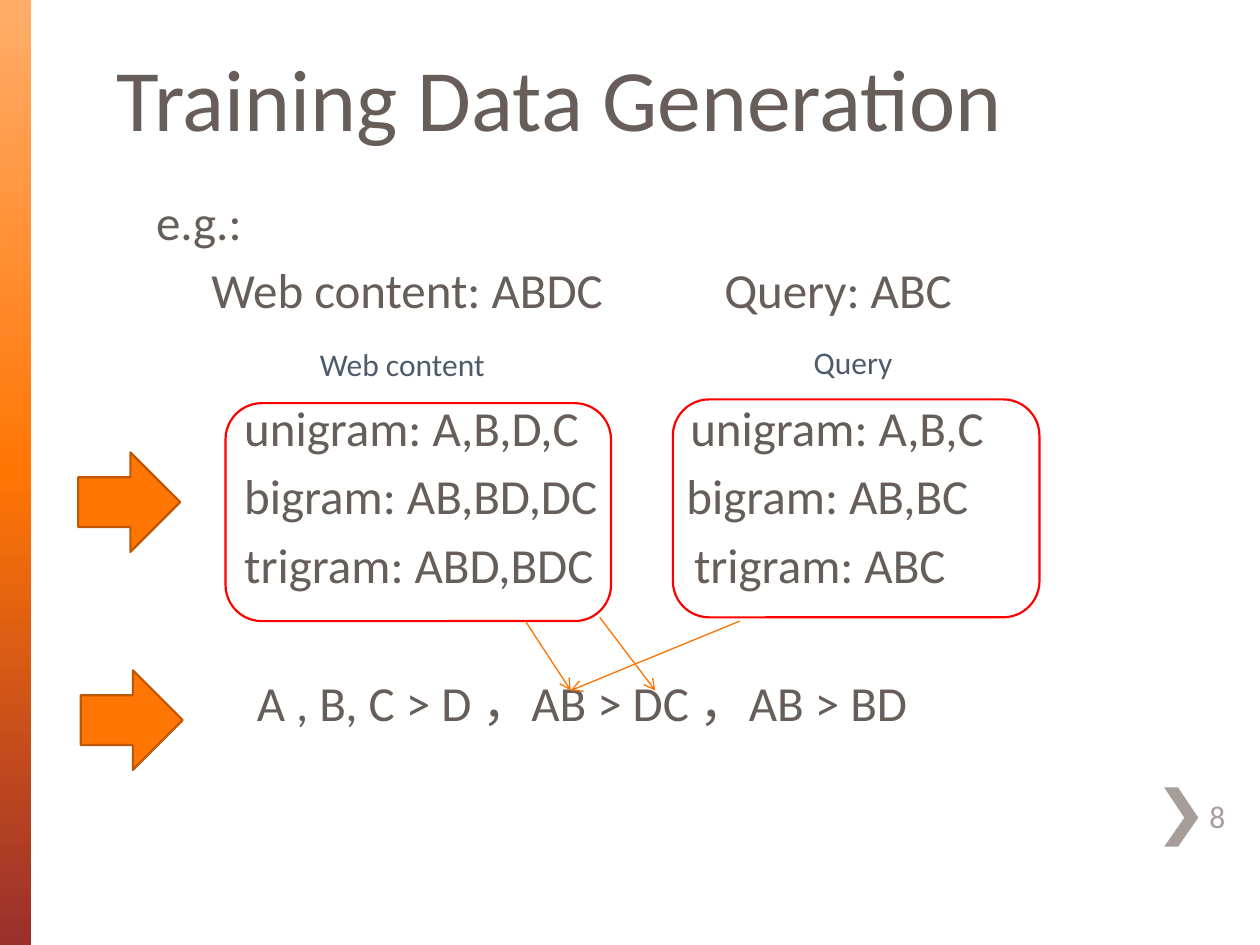
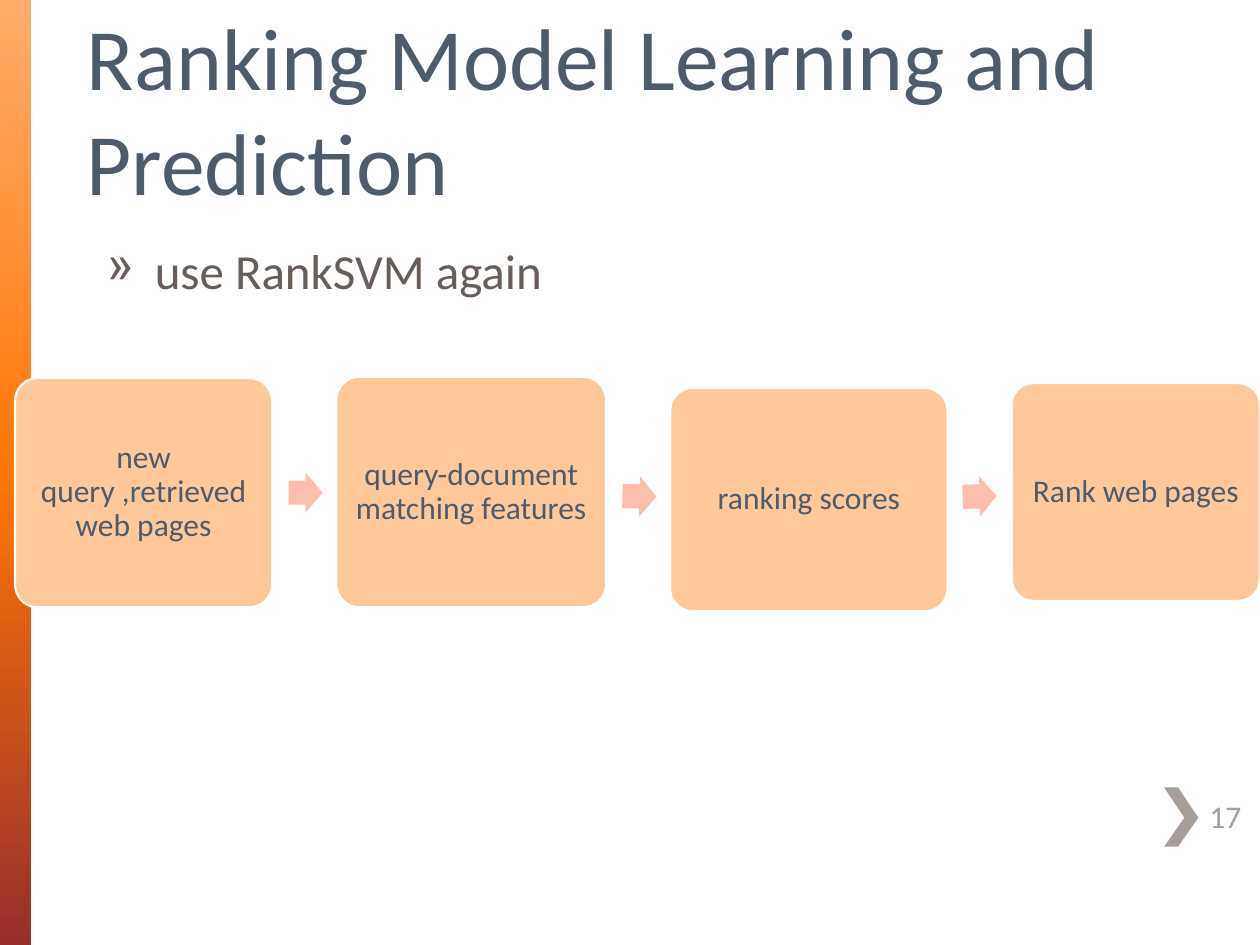
import copy
import dataclasses
import typing

import lxml.etree
import pptx
import pptx.dml.color
import pptx.dml.fill
import pptx.enum.shapes
import pptx.enum.text
import pptx.oxml.ns
import pptx.presentation
import pptx.shapes.autoshape
import pptx.slide
import pptx.text.text
import pptx.util

Inches = pptx.util.Inches
Pt = pptx.util.Pt
Preset = pptx.enum.shapes.MSO_SHAPE
Anchor = pptx.enum.text.MSO_ANCHOR
Align = pptx.enum.text.PP_ALIGN

FONT = "Calibri"
BROWN, SLATE, GREY = "675D59", "4D5B6B", "A79D99"
ORANGE, DARK_ORANGE, LINK_ORANGE = "FF7605", "BD5704", "FE7300"
PEACH, PINK, RED, WHITE = "FFC89B", "FFBDAB", "FF0000", "FFFFFF"
BAND_STOPS = [(0, "FFAD69"), (0.5, ORANGE), (1, "9A2F2C")]
CHEVRON = [(9.35, 6.25), (9.24, 6.25), (9.4, 6.49), (9.24, 6.72), (9.35, 6.72), (9.51, 6.49)]
ROW_GAP, SECTION_GAP = 5.3, 45.4


@dataclasses.dataclass
class Box:
    """A rectangle in inches."""

    left: float
    top: float
    width: float
    height: float

    def lengths(self) -> list[pptx.util.Length]:
        """Return the four sides as lengths."""
        return [Inches(side) for side in dataclasses.astuple(self)]


@dataclasses.dataclass
class TextStyle:
    """Size and colour of a run."""

    size: float
    color: str


@dataclasses.dataclass
class ExampleRow:
    """A line of the worked example with its columns and tab stops."""

    columns: list[str]
    stops: list[float]
    space_before: float = ROW_GAP


@dataclasses.dataclass
class Step:
    """A box of the prediction process."""

    text: str
    box: Box


@dataclasses.dataclass
class StepArrow:
    """An arrow between two process boxes."""

    left: float
    top: float
    rotation: float = 0


@dataclasses.dataclass
class Link:
    """An arrow from n-grams to a preference pair."""

    start: tuple[float, float]
    end: tuple[float, float]


BODY = TextStyle(28, BROWN)
LABEL = TextStyle(18, SLATE)
NUMBER = TextStyle(18, GREY)

EXAMPLE_ROWS = [
    ExampleRow(["e.g.:"], [], 0),
    ExampleRow(["Web content: ABDC", "Query: ABC"], [0.44, 4.51]),
    ExampleRow(["unigram: A,B,D,C", "unigram: A,B,C"], [0.7, 4.24], SECTION_GAP),
    ExampleRow(["bigram: AB,BD,DC", "bigram: AB,BC"], [0.7, 4.21]),
    ExampleRow(["trigram: ABD,BDC", "trigram: ABC"], [0.7, 4.27]),
    ExampleRow(["A , B, C > D ，AB > DC ，AB > BD"], [0.8], SECTION_GAP),
]
NGRAM_FRAMES = [Box(5.34, 3.17, 2.91, 1.73), Box(1.79, 3.2, 3.06, 1.73)]
NGRAM_LABELS = [("Web content", Box(2.44, 2.69, 1.73, 0.4)), ("Query", Box(6.36, 2.67, 0.87, 0.4))]
STAGE_ARROWS = [Box(0.62, 3.59, 0.81, 0.79), Box(0.64, 5.32, 0.81, 0.79)]
LINKS = [
    Link((4.17, 4.93), (4.53, 5.48)),
    Link((5.87, 4.93), (4.53, 5.48)),
    Link((4.76, 4.9), (5.2, 5.48)),
]
STEPS = [
    Step("new query ,retrieved web pages", Box(0.12, 3, 2.04, 1.82)),
    Step("query-document matching features", Box(2.67, 2.99, 2.14, 1.83)),
    Step("ranking scores", Box(5.32, 3.08, 2.2, 1.77)),
    Step("Rank web pages", Box(8.03, 3.04, 1.97, 1.73)),
]
STEP_ARROWS = [StepArrow(2.29, 3.75), StepArrow(4.94, 3.78, 1.3), StepArrow(7.64, 3.78, 358.7)]


def rgb(value: str) -> pptx.dml.color.RGBColor:
    """Turn a hex string into a colour."""
    return pptx.dml.color.RGBColor.from_string(value)


def paint(
    shape: pptx.shapes.autoshape.Shape,
    fill: typing.Optional[str] = None,
    line: typing.Optional[str] = None,
) -> None:
    """Set the fill and outline of a shape and drop its shadow."""
    shape.shadow.inherit = False
    if fill:
        shape.fill.solid()
        shape.fill.fore_color.rgb = rgb(fill)
    else:
        shape.fill.background()
    if line:
        shape.line.color.rgb = rgb(line)
        shape.line.width = Pt(1.25)
    else:
        shape.line.fill.background()


def add_preset(
    slide: pptx.slide.Slide,
    preset: Preset,
    box: Box,
    fill: typing.Optional[str] = None,
    line: typing.Optional[str] = None,
) -> pptx.shapes.autoshape.Shape:
    """Add a painted preset shape."""
    shape = slide.shapes.add_shape(preset, *box.lengths())
    paint(shape, fill, line)
    return shape


def add_run(paragraph: pptx.text.text._Paragraph, text: str, style: TextStyle) -> None:
    """Append a styled run to a paragraph."""
    run = paragraph.add_run()
    run.text = text
    run.font.name = FONT
    run.font.size = Pt(style.size)
    run.font.color.rgb = rgb(style.color)


def add_frame(
    slide: pptx.slide.Slide, box: Box, anchor: Anchor = Anchor.TOP
) -> pptx.text.text.TextFrame:
    """Add an empty wrapping text box."""
    frame = slide.shapes.add_textbox(*box.lengths()).text_frame
    frame.word_wrap = True
    frame.vertical_anchor = anchor
    return frame


def add_text(
    slide: pptx.slide.Slide, box: Box, text: str, style: TextStyle, anchor: Anchor = Anchor.TOP
) -> pptx.text.text._Paragraph:
    """Add a text box with one paragraph."""
    paragraph = add_frame(slide, box, anchor).paragraphs[0]
    add_run(paragraph, text, style)
    return paragraph


def set_gradient(fill: pptx.dml.fill.FillFormat, stops: list[tuple[float, str]]) -> None:
    """Fill downwards with three gradient stops."""
    fill.gradient()
    fill.gradient_angle = 270
    stop_list = fill.gradient_stops[0]._gs.getparent()
    stop_list.append(copy.deepcopy(stop_list[0]))
    for stop, (position, color) in zip(fill.gradient_stops, stops):
        stop.position = position
        stop.color.rgb = rgb(color)


def add_chevron(slide: pptx.slide.Slide) -> None:
    """Draw the chevron beside the page number."""
    start, *others = [(Inches(x), Inches(y)) for x, y in CHEVRON]
    builder = slide.shapes.build_freeform(*start)
    builder.add_line_segments(others, close=True)
    paint(builder.convert_to_shape(), GREY)


def add_base_slide(
    presentation: pptx.presentation.Presentation,
    title: str,
    title_box: Box,
    title_color: str,
    number: int,
) -> pptx.slide.Slide:
    """Add a slide with the side band, title, chevron and page number."""
    slide = presentation.slides.add_slide(presentation.slide_layouts[6])
    band = add_preset(slide, Preset.RECTANGLE, Box(0, 0, 0.25, 7.5))
    set_gradient(band.fill, BAND_STOPS)
    add_chevron(slide)
    add_text(slide, title_box, title, TextStyle(50, title_color), Anchor.BOTTOM)
    add_text(slide, Box(9.5, 6.28, 0.5, 0.39), str(number), NUMBER, Anchor.MIDDLE)
    return slide


def add_example(slide: pptx.slide.Slide, rows: list[ExampleRow]) -> None:
    """Write the worked example with columns on tab stops."""
    frame = add_frame(slide, Box(1.14, 1.47, 8.17, 4.83))
    for index, row in enumerate(rows):
        paragraph = frame.add_paragraph() if index else frame.paragraphs[0]
        paragraph.space_before = Pt(row.space_before)
        properties = paragraph._p.get_or_add_pPr()
        if row.stops:
            tabs = lxml.etree.SubElement(properties, pptx.oxml.ns.qn("a:tabLst"))
            for stop in row.stops:
                tab = lxml.etree.SubElement(tabs, pptx.oxml.ns.qn("a:tab"))
                tab.set("pos", str(Inches(stop)))
                tab.set("algn", "l")
        lead = "\t" if row.stops else ""
        for column in row.columns:
            add_run(paragraph, lead + column, BODY)


def add_link(slide: pptx.slide.Slide, link: Link) -> None:
    """Draw a thin arrow."""
    points = [Inches(value) for value in (*link.start, *link.end)]
    connector = slide.shapes.add_connector(pptx.enum.shapes.MSO_CONNECTOR.STRAIGHT, *points)
    connector.line.color.rgb = rgb(LINK_ORANGE)
    connector.line.width = Pt(0.75)
    head = lxml.etree.SubElement(connector.line._get_or_add_ln(), pptx.oxml.ns.qn("a:tailEnd"))
    head.set("type", "arrow")
    lxml.etree.SubElement(connector._element.spPr, pptx.oxml.ns.qn("a:effectLst"))


def add_step(slide: pptx.slide.Slide, step: Step) -> None:
    """Draw a process box with centred text."""
    shape = add_preset(slide, Preset.ROUNDED_RECTANGLE, step.box, PEACH, WHITE)
    shape.adjustments[0] = 0.1
    frame = shape.text_frame
    frame.word_wrap = True
    frame.vertical_anchor = Anchor.MIDDLE
    frame.margin_left = frame.margin_right = Inches(0.07)
    frame.margin_top = frame.margin_bottom = Inches(0.07)
    paragraph = frame.paragraphs[0]
    paragraph.alignment = Align.CENTER
    paragraph.line_spacing = 0.9
    add_run(paragraph, step.text, LABEL)


def build_training_slide(presentation: pptx.presentation.Presentation) -> None:
    """Build the training data slide."""
    title_box = Box(0.83, 0.29, 7.92, 0.94)
    slide = add_base_slide(presentation, "Training Data Generation", title_box, BROWN, 8)
    add_example(slide, EXAMPLE_ROWS)
    for box in NGRAM_FRAMES:
        add_preset(slide, Preset.ROUNDED_RECTANGLE, box, line=RED)
    for text, box in NGRAM_LABELS:
        add_text(slide, box, text, LABEL)
    for box in STAGE_ARROWS:
        add_preset(slide, Preset.RIGHT_ARROW, box, ORANGE, DARK_ORANGE)
    for link in LINKS:
        add_link(slide, link)


def build_prediction_slide(presentation: pptx.presentation.Presentation) -> None:
    """Build the ranking model slide."""
    title_box = Box(0.59, 0.13, 8.99, 1.61)
    title = "Ranking Model Learning and Prediction"
    slide = add_base_slide(presentation, title, title_box, SLATE, 17)
    paragraph = add_text(slide, Box(0.75, 1.86, 8.82, 1.1), "use RankSVM again", BODY)
    properties = paragraph._p.get_or_add_pPr()
    properties.set("marL", str(Inches(0.38)))
    properties.set("indent", str(-Inches(0.38)))
    lxml.etree.SubElement(properties, pptx.oxml.ns.qn("a:buChar")).set("char", "»")
    for step in STEPS:
        add_step(slide, step)
    for arrow in STEP_ARROWS:
        box = Box(arrow.left, arrow.top, 0.27, 0.32)
        shape = add_preset(slide, Preset.RIGHT_ARROW, box, PINK)
        shape.adjustments[0] = 0.6
        shape.rotation = arrow.rotation


def main() -> None:
    """Build and save the presentation."""
    presentation = pptx.Presentation()
    presentation.slide_width = Inches(10)
    presentation.slide_height = Inches(7.5)
    build_training_slide(presentation)
    build_prediction_slide(presentation)
    presentation.save("out.pptx")


if __name__ == "__main__":
    main()
